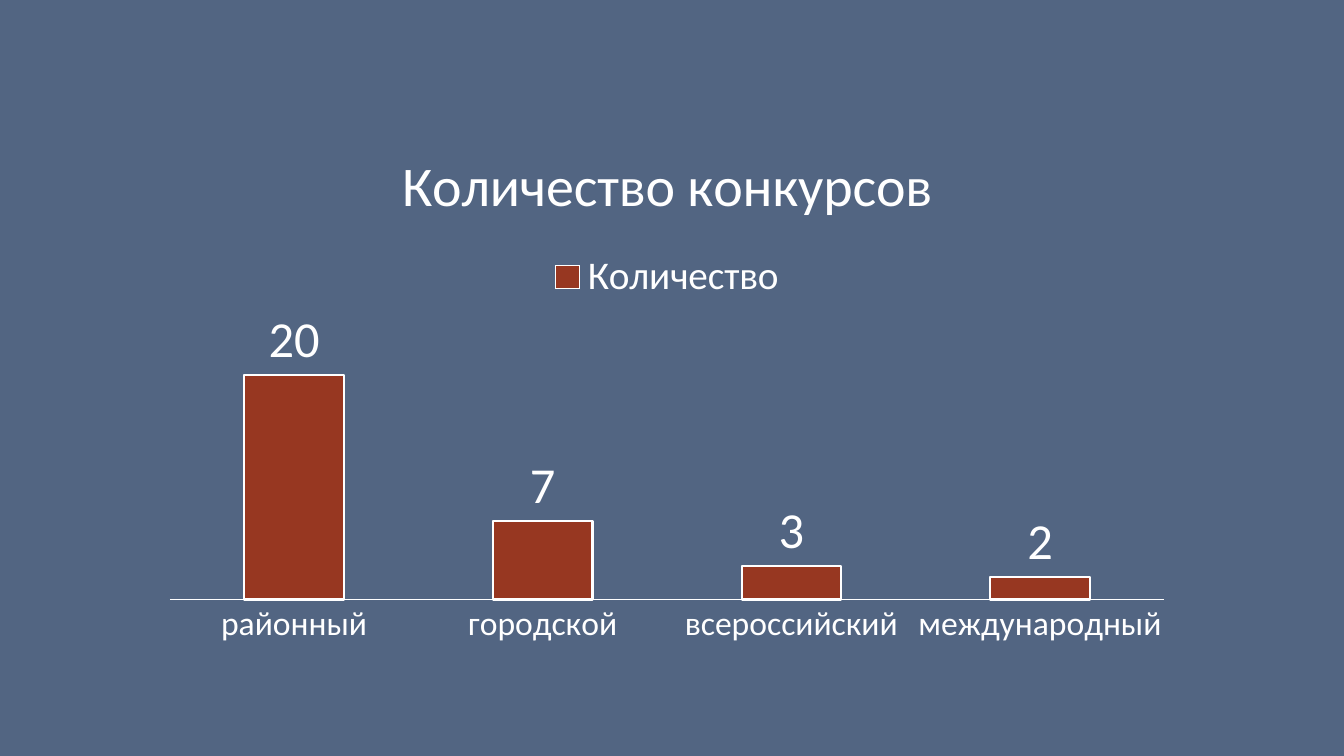
from dataclasses import dataclass

from pptx import Presentation
from pptx.chart.data import CategoryChartData
from pptx.dml.color import RGBColor
from pptx.enum.chart import XL_CHART_TYPE, XL_LABEL_POSITION, XL_LEGEND_POSITION, XL_TICK_MARK
from pptx.util import Pt

COLUMNS = XL_CHART_TYPE.COLUMN_CLUSTERED
OUTSIDE_END = XL_LABEL_POSITION.OUTSIDE_END
LEGEND_TOP = XL_LEGEND_POSITION.TOP
NO_TICK = XL_TICK_MARK.NONE

CONTESTS = {"районный": 20, "городской": 7, "всероссийский": 3, "международный": 2}


@dataclass(frozen=True)
class Theme:
    """Colours, font and type sizes of the deck."""
    background: RGBColor = RGBColor(0x52, 0x65, 0x82)
    ink: RGBColor = RGBColor(0xFF, 0xFF, 0xFF)
    column: RGBColor = RGBColor(0x97, 0x37, 0x21)
    font: str = "Calibri"
    base_size: int = 10
    category_size: int = 24
    legend_size: int = 28
    label_size: int = 36
    title_size: int = 40


THEME = Theme()


@dataclass(frozen=True)
class Box:
    """A rectangle on the page, in points."""
    left: float
    top: float
    width: float
    height: float


def style_font(font, size):
    """Give a font the theme's face and colour at the given size."""
    font.name = THEME.font
    font.size = Pt(size)
    font.bold = False
    font.color.rgb = THEME.ink


def style_line(line, width):
    """Draw a line in the theme's ink."""
    line.color.rgb = THEME.ink
    line.width = Pt(width)


def style_title(chart, text):
    """Write the chart title above the plot."""
    chart.has_title = True
    frame = chart.chart_title.text_frame
    frame.text = text
    style_font(frame.paragraphs[0].runs[0].font, THEME.title_size)
    chart.chart_title.include_in_layout = False


def style_legend(chart):
    """Place the legend under the title."""
    chart.has_legend = True
    chart.legend.position = LEGEND_TOP
    chart.legend.include_in_layout = False
    style_font(chart.legend.font, THEME.legend_size)


def style_axes(chart):
    """Show the category axis only, without ticks or gridlines."""
    categories = chart.category_axis
    categories.major_tick_mark = NO_TICK
    categories.minor_tick_mark = NO_TICK
    style_line(categories.format.line, 0.75)
    style_font(categories.tick_labels.font, THEME.category_size)
    values = chart.value_axis
    values.minimum_scale = 0
    values.maximum_scale = 25
    values.has_major_gridlines = False
    values.visible = False


def style_columns(plot):
    """Colour the columns and put their values on top."""
    plot.gap_width = 150
    plot.overlap = -25
    plot.vary_by_categories = False
    series = plot.series[0]
    series.format.fill.solid()
    series.format.fill.fore_color.rgb = THEME.column
    style_line(series.format.line, 1.5)
    labels = series.data_labels
    labels.show_value = True
    labels.position = OUTSIDE_END
    style_font(labels.font, THEME.label_size)


def add_contest_chart(page, box):
    """Add the column chart of contests by level to the box."""
    chart_data = CategoryChartData()
    chart_data.categories = list(CONTESTS)
    chart_data.add_series("Количество", list(CONTESTS.values()))
    chart = page.shapes.add_chart(
        COLUMNS, Pt(box.left), Pt(box.top), Pt(box.width), Pt(box.height), chart_data
    ).chart
    style_font(chart.font, THEME.base_size)
    style_title(chart, "Количество конкурсов")
    style_legend(chart)
    style_axes(chart)
    style_columns(chart.plots[0])


def main():
    """Build and save the deck."""
    deck = Presentation()
    deck.slide_width = Pt(960)
    deck.slide_height = Pt(540)
    page = deck.slides.add_slide(deck.slide_layouts[6])
    page.background.fill.solid()
    page.background.fill.fore_color.rgb = THEME.background
    add_contest_chart(page, Box(106.5, 86.5, 740, 381.5))
    deck.save("out.pptx")


if __name__ == "__main__":
    main()
